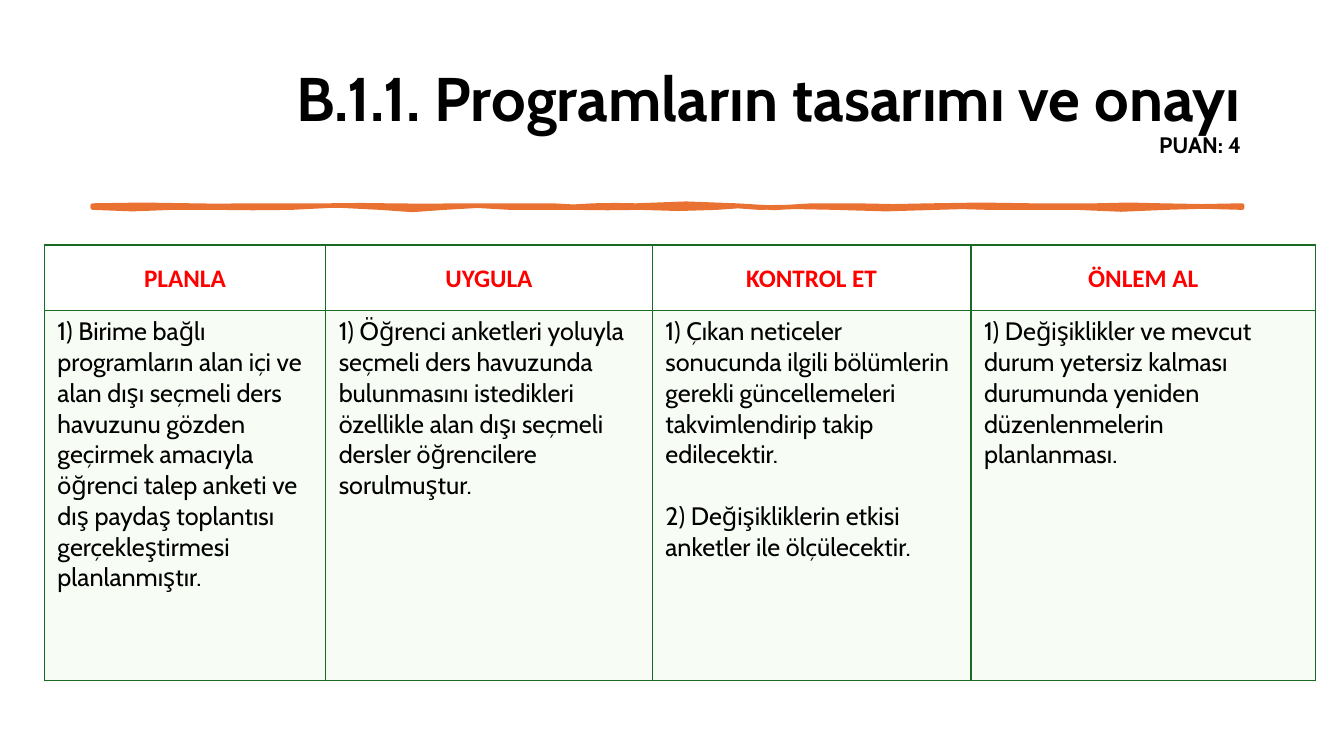
import pptx
import pptx.dml.color
import pptx.enum.text
import pptx.oxml
import pptx.oxml.ns
import pptx.util

Inches, Pt = pptx.util.Inches, pptx.util.Pt
ALIGN, ANCHOR = pptx.enum.text.PP_ALIGN, pptx.enum.text.MSO_ANCHOR

COLORS = {"text": "000000", "heading": "FF0000", "brush": "E97132",
          "border": "196B24", "cell": "D9F2D0"}
TITLE = [("B.1.1. Programların tasarımı ve onayı", 44), ("PUAN: 4", 16)]
COLUMNS = [
    ("PLANLA", 2.79, ["1) Birime bağlı programların alan içi ve alan dışı seçmeli ders havuzunu "
                      "gözden geçirmek amacıyla öğrenci talep anketi ve dış paydaş toplantısı "
                      "gerçekleştirmesi planlanmıştır."]),
    ("UYGULA", 3.24, ["1) Öğrenci anketleri yoluyla seçmeli ders havuzunda bulunmasını istedikleri "
                      "özellikle alan dışı seçmeli dersler öğrencilere sorulmuştur."]),
    ("KONTROL ET", 3.16, ["1) Çıkan neticeler sonucunda ilgili bölümlerin gerekli güncellemeleri "
                          "takvimlendirip takip edilecektir.",
                          "2) Değişikliklerin etkisi anketler ile ölçülecektir."]),
    ("ÖNLEM AL", 3.42, ["1) Değişiklikler ve mevcut durum yetersiz kalması durumunda yeniden "
                        "düzenlenmelerin planlanması."]),
]
ROW_HEIGHTS = [0.65, 3.67]

# Brush stroke edges: (end x, first bend, second bend), bends in hundredths of an inch
BRUSH_LEFT, BRUSH_RIGHT, BRUSH_TOP, BRUSH_BOTTOM = 0.92, 12.32, 2.04, 2.06
TOP_EDGE = [(1.9, 0, -2), (2.44, 2, -1), (3.31, 1, -1), (3.84, 1, -2), (4.6, 2, -1),
            (5.48, 1, -1), (5.89, 1, 2), (6.31, -2, 1), (7.3, -1, -4), (8.06, 4, 2),
            (8.48, -2, 2), (9.24, -2, 4), (10.23, -2, 0), (10.87, 0, 0),
            (11.52, 0, -2), (12.32, 2, 0)]
BOTTOM_EDGE = [(11.56, 0, -3), (10.68, 3, 2), (9.81, -2, 2), (9.28, -2, 0), (8.29, 0, 4),
               (7.53, -4, 2), (7.11, -2, -2), (6.35, 2, 1), (5.7, -1, 2), (5.06, -2, 2),
               (4.41, -2, -3), (3.77, 3, 3), (2.89, -3, -3), (2.13, 3, -2),
               (1.71, 2, -2), (0.92, 2, 2)]
STEPS = 2


def rgb(name):
    return pptx.dml.color.RGBColor.from_string(COLORS[name])


def add_span(para, text, size, font, color, bold=False):
    span = para.add_run()
    span.text = text
    span.font.size, span.font.name, span.font.bold = Pt(size), font, bold
    span.font.color.rgb = rgb(color)


def edge_points(start, base, bends):
    """Sample a chain of cubic curves whose ends all lie at height base."""
    points = []
    for end, first, second in bends:
        for step in range(1, STEPS + 1):
            t = step / STEPS
            bend = 3 * t * (1 - t) * ((1 - t) * first + t * second)
            points.append((Inches(start + t * (end - start)), Inches(base + bend / 100)))
        start = end
    return points


def add_title(page):
    box = page.shapes.title
    box.left, box.top, box.width, box.height = map(Inches, (0.91, 0.4, 11.5, 1.45))
    box.text_frame.vertical_anchor = ANCHOR.MIDDLE
    para = box.text_frame.paragraphs[0]
    para.alignment, para.line_spacing = ALIGN.RIGHT, 0.9
    for index, (text, size) in enumerate(TITLE):
        if index:
            para.add_line_break()
        add_span(para, text, size, "Cabin", "text", True)


def add_brush(page):
    builder = page.shapes.build_freeform(Inches(BRUSH_LEFT), Inches(BRUSH_TOP))
    builder.add_line_segments(
        edge_points(BRUSH_LEFT, BRUSH_TOP, TOP_EDGE)
        + [(Inches(BRUSH_RIGHT), Inches(BRUSH_BOTTOM))]
        + edge_points(BRUSH_RIGHT, BRUSH_BOTTOM, BOTTOM_EDGE), close=True)
    brush = builder.convert_to_shape()
    brush.shadow.inherit = False
    brush.fill.solid()
    brush.fill.fore_color.rgb = rgb("brush")
    brush.line.color.rgb = rgb("brush")
    brush.line.width = Pt(3.25)


def add_borders(cell):
    properties = cell._tc.get_or_add_tcPr()
    for index, side in enumerate("LRTB"):
        properties.insert(index, pptx.oxml.parse_xml(
            f'<a:ln{side} {pptx.oxml.ns.nsdecls("a")} w="{Pt(1)}"><a:solidFill>'
            f'<a:srgbClr val="{COLORS["border"]}"/></a:solidFill></a:ln{side}>'))


def set_margins(cell, side, edge):
    cell.margin_left = cell.margin_right = Inches(side)
    cell.margin_top = cell.margin_bottom = Inches(edge)


def fill_heading(cell, text):
    set_margins(cell, 0.05, 0)
    cell.vertical_anchor = ANCHOR.MIDDLE
    cell.fill.background()
    para = cell.text_frame.paragraphs[0]
    para.alignment, para.line_spacing, para.space_after = ALIGN.CENTER, 1.07, Pt(8)
    add_span(para, text, 18, "Calibri", "heading", True)


def fill_body(cell, items):
    set_margins(cell, 0.13, 0.06)
    cell.fill.solid()
    cell.fill.fore_color.rgb = rgb("cell")
    tint = cell._tc.tcPr.find(".//" + pptx.oxml.ns.qn("a:srgbClr"))
    tint.append(pptx.oxml.parse_xml(f'<a:alpha {pptx.oxml.ns.nsdecls("a")} val="20000"/>'))
    frame = cell.text_frame
    for index, text in enumerate(items):
        para = frame.add_paragraph() if index else frame.paragraphs[0]
        para.space_before = Pt(22 if index else 0)
        add_span(para, text, 18, "Cabin", "text")


def add_plan_table(page):
    widths = [width for _, width, _ in COLUMNS]
    table = page.shapes.add_table(
        len(ROW_HEIGHTS), len(COLUMNS), Inches(0.44), Inches(2.43),
        Inches(sum(widths)), Inches(sum(ROW_HEIGHTS))).table
    table.first_row = table.horz_banding = False
    for row, height in zip(table.rows, ROW_HEIGHTS):
        row.height = Inches(height)
    for index, (heading, width, items) in enumerate(COLUMNS):
        table.columns[index].width = Inches(width)
        fill_heading(table.cell(0, index), heading)
        fill_body(table.cell(1, index), items)
    for cell in table.iter_cells():
        add_borders(cell)


def main():
    deck = pptx.Presentation()
    deck.slide_width, deck.slide_height = Inches(13.33), Inches(7.5)
    page = deck.slides.add_slide(deck.slide_layouts[5])
    add_title(page)
    add_brush(page)
    add_plan_table(page)
    deck.save("out.pptx")


if __name__ == "__main__":
    main()
